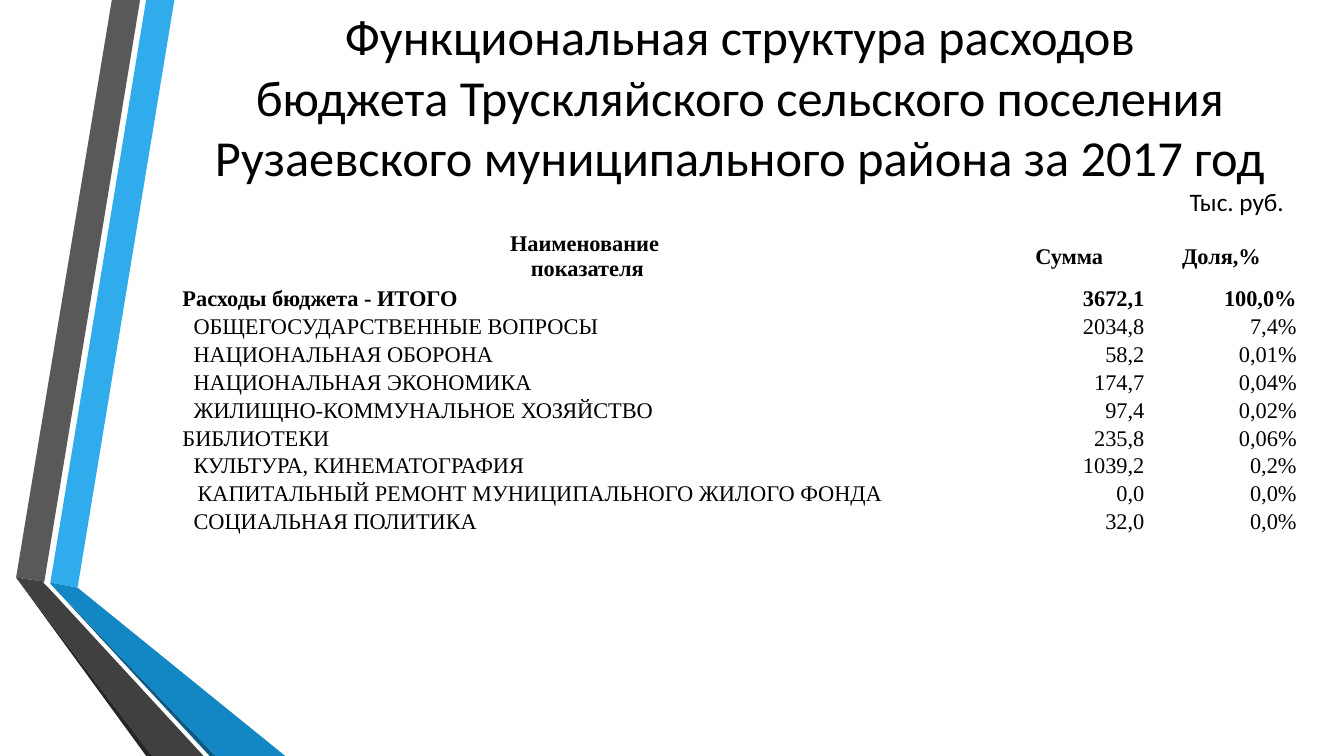
from lxml import etree
from pptx import Presentation
from pptx.dml.color import RGBColor
from pptx.enum.text import MSO_ANCHOR, PP_ALIGN
from pptx.oxml.ns import qn
from pptx.util import Inches, Pt

LEFT, CENTER, RIGHT = PP_ALIGN.LEFT, PP_ALIGN.CENTER, PP_ALIGN.RIGHT
MIDDLE, BOTTOM, TOP = MSO_ANCHOR.MIDDLE, MSO_ANCHOR.BOTTOM, MSO_ANCHOR.TOP

COLORS = {
    "text": "000000", "border": "FFFFFF",
    "blue": "30ACEC", "blue_fold": "1287C3", "blue_edge": "0C5A82",
    "gray": "595959", "gray_fold": "404040", "gray_edge": "262626",
}

# Ribbon pieces from back to front: colour and corner points
RIBBONS = [
    ("blue", [(0.5, 5.78), (0.77, 5.83), (1.73, 0), (1.45, 0)]),
    ("gray", [(1.39, 0), (1.11, 0), (0.16, 5.73), (0.44, 5.77)]),
    ("gray_edge", [(0.16, 5.73), (1.45, 7.5), (1.51, 7.5)]),
    ("blue_edge", [(0.5, 5.79), (2.08, 7.5), (2.14, 7.5)]),
    ("blue_fold", [(0.5, 5.79), (2.14, 7.5), (2.83, 7.5), (0.77, 5.83), (0.5, 5.78)]),
    ("gray_fold", [(2.02, 7.5), (0.48, 5.83), (0.43, 5.78), (0.44, 5.77),
                   (0.16, 5.73), (1.51, 7.5)]),
]

TITLE = ("Функциональная структура расходов\v"
         "бюджета Трускляйского сельского поселения "
         "Рузаевского муниципального района за 2017 год")

HEADER = ("Наименование \vпоказателя", "Сумма", "Доля,%")
TOTAL = ("Расходы бюджета - ИТОГО", "3672,1", "100,0%")

# Left margin of the name, then the row's texts
EXPENSES = [
    (0.12, ("ОБЩЕГОСУДАРСТВЕННЫЕ ВОПРОСЫ", "2034,8", "7,4%")),
    (0.12, ("НАЦИОНАЛЬНАЯ ОБОРОНА", "58,2", "0,01%")),
    (0.12, ("НАЦИОНАЛЬНАЯ ЭКОНОМИКА", "174,7", "0,04%")),
    (0.12, ("ЖИЛИЩНО-КОММУНАЛЬНОЕ ХОЗЯЙСТВО", "97,4", "0,02%")),
    (0.01, ("БИБЛИОТЕКИ", "235,8", "0,06%")),
    (0.12, ("КУЛЬТУРА, КИНЕМАТОГРАФИЯ", "1039,2", "0,2%")),
    (0.16, ("КАПИТАЛЬНЫЙ РЕМОНТ МУНИЦИПАЛЬНОГО ЖИЛОГО ФОНДА", "0,0", "0,0%")),
    (0.12, ("СОЦИАЛЬНАЯ ПОЛИТИКА", "32,0", "0,0%")),
]


class BudgetSlide:
    heading_font = "Calibri"
    table_font = "Times New Roman"
    cell_margin = 0.01

    def __init__(self, slide):
        self.slide = slide

    def set_text(self, frame, text, font, size, align=LEFT, bold=False):
        paragraph = frame.paragraphs[0]
        paragraph.text = text
        paragraph.alignment = align
        paragraph.font.name = font
        paragraph.font.size = Pt(size)
        paragraph.font.bold = bold
        paragraph.font.color.rgb = RGBColor.from_string(COLORS["text"])

    def ribbon(self, color, points):
        corners = [(Inches(x), Inches(y)) for x, y in points]
        builder = self.slide.shapes.build_freeform(*corners[0])
        builder.add_line_segments(corners[1:], close=True)
        piece = builder.convert_to_shape()
        piece.shadow.inherit = False
        piece.fill.solid()
        piece.fill.fore_color.rgb = RGBColor.from_string(COLORS[color])
        piece.line.fill.background()

    def text(self, text, box, size, align=LEFT, anchor=TOP, wrap=True):
        frame = self.slide.shapes.add_textbox(*map(Inches, box)).text_frame
        frame.word_wrap = wrap
        frame.vertical_anchor = anchor
        self.set_text(frame, text, self.heading_font, size, align)

    def border(self, cell):
        properties = cell._tc.get_or_add_tcPr()
        for position, side in enumerate(("lnL", "lnR", "lnT", "lnB")):
            line = etree.Element(qn(f"a:{side}"), w=str(Pt(1)))
            fill = etree.SubElement(line, qn("a:solidFill"))
            etree.SubElement(fill, qn("a:srgbClr"), val=COLORS["border"])
            properties.insert(position, line)

    def cell(self, cell, text, align, anchor, bold, indent):
        cell.fill.background()
        cell.vertical_anchor = anchor
        cell.margin_left = Inches(indent)
        cell.margin_right = cell.margin_top = Inches(self.cell_margin)
        cell.margin_bottom = 0
        self.set_text(cell.text_frame, text, self.table_font, 16, align, bold)
        self.border(cell)

    def table(self, box, widths, header_height, row_height):
        rows = [(self.cell_margin, HEADER), (self.cell_margin, TOTAL), *EXPENSES]
        table = self.slide.shapes.add_table(
            len(rows), len(widths), *map(Inches, box)).table
        table.first_row = table.horz_banding = False
        for column, width in zip(table.columns, widths):
            column.width = Inches(width)
        for r, (indent, texts) in enumerate(rows):
            is_header = r == 0
            table.rows[r].height = Inches(header_height if is_header else row_height)
            for c, text in enumerate(texts):
                align = CENTER if is_header else RIGHT if c else LEFT
                self.cell(table.cell(r, c), text, align,
                          MIDDLE if is_header else BOTTOM,
                          bold=r < 2, indent=self.cell_margin if c else indent)


def main():
    presentation = Presentation()
    presentation.slide_width = Inches(13.33)
    presentation.slide_height = Inches(7.5)
    budget = BudgetSlide(presentation.slides.add_slide(presentation.slide_layouts[6]))

    # Folded ribbons on the left
    for color, points in RIBBONS:
        budget.ribbon(color, points)

    # Title
    budget.text(TITLE, (1.63, 0.09, 11.42, 1.73), 36, CENTER, MIDDLE)

    # Expense table and its unit
    budget.table((1.8, 2.27, 11.07, 1.99), (8.05, 1.51, 1.51), 0.46, 0.17)
    budget.text("Тыс. руб.", (11.7, 1.8, 1.17, 0.4), 18, wrap=False)

    presentation.save("out.pptx")


if __name__ == "__main__":
    main()
